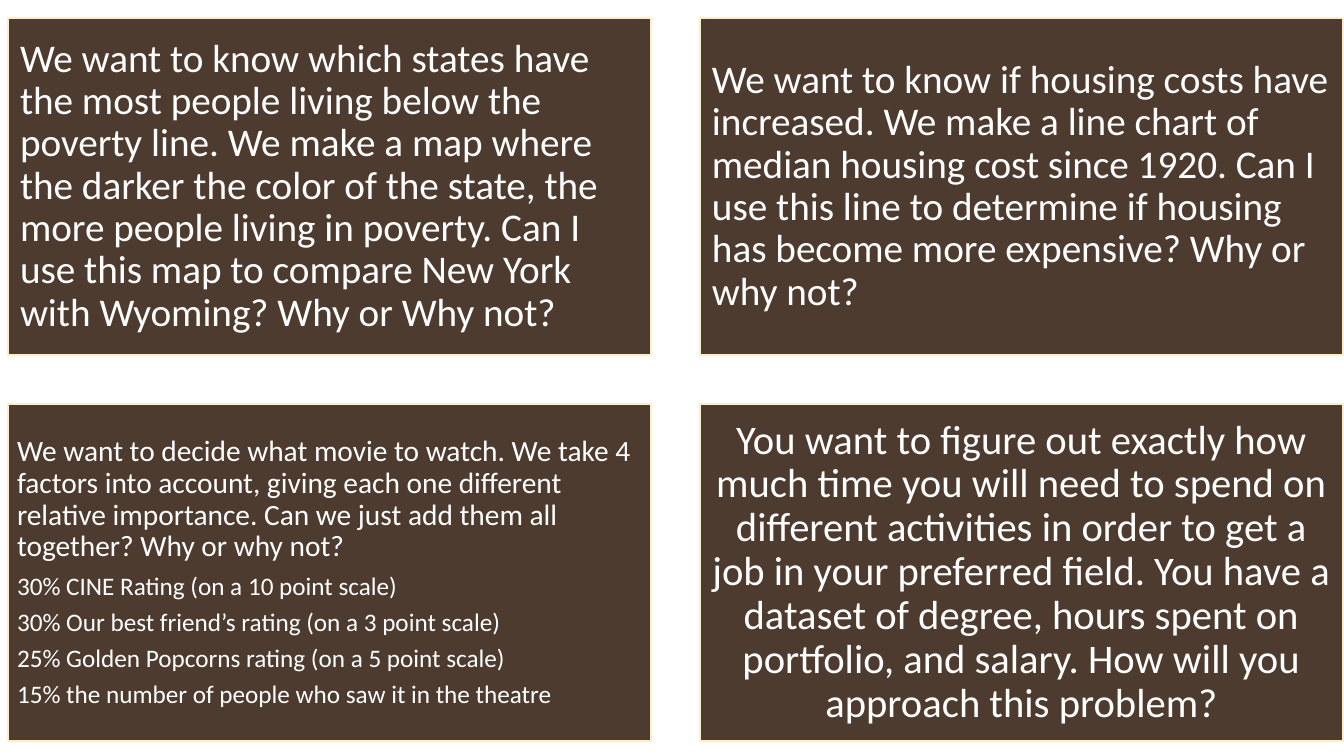
from pptx import Presentation
from pptx.dml.color import RGBColor
from pptx.enum.shapes import MSO_SHAPE
from pptx.enum.text import MSO_ANCHOR, PP_ALIGN
from pptx.util import Emu, Pt

COLORS = {"card": "4E3B30", "border": "FBEEC9", "text": "FFFFFF"}
FONT = "Calibri"
SLIDE_WIDTH, SLIDE_HEIGHT = 1344, 756
CARD_WIDTH, CARD_HEIGHT = 643, 337
GRID_LEFT, GRID_TOP = 8, 18
COLUMN_GAP, ROW_GAP = 49, 49

QUESTIONS = [
    {
        "lines": [(28, "We want to know which states have the most people living below the "
                       "poverty line. We make a map where the darker the color of the state, "
                       "the more people living in poverty. Can I use this map to compare "
                       "New York with Wyoming? Why or Why not?")],
        "inset": 12,
        "align": PP_ALIGN.LEFT,
    },
    {
        "lines": [(28, "We want to know if housing costs have increased. We make a line chart "
                       "of median housing cost since 1920. Can I use this line to determine "
                       "if housing has become more expensive? Why or why not?")],
        "inset": 12,
        "align": PP_ALIGN.LEFT,
    },
    {
        "lines": [
            (21, "We want to decide what movie to watch. We take 4 factors into account, "
                 "giving each one different relative importance. Can we just add them all "
                 "together? Why or why not?"),
            (18, "30% CINE Rating (on a 10 point scale)"),
            (18, "30% Our best friend’s rating (on a 3 point scale)"),
            (18, "25% Golden Popcorns rating (on a 5 point scale)"),
            (18, "15% the number of people who saw it in the theatre"),
        ],
        "inset": 9,
        "align": PP_ALIGN.LEFT,
    },
    {
        "lines": [(29, "You want to figure out exactly how much time you will need to spend on "
                       "different activities in order to get a job in your preferred field. "
                       "You have a dataset of degree, hours spent on portfolio, and salary. "
                       "How will you approach this problem?")],
        "inset": 12,
        "align": PP_ALIGN.CENTER,
    },
]


def px(length):
    """Turn whole pixels into EMU."""
    return Emu(round(length * 914400 / 100.8))


def color(name):
    """Look up a palette colour."""
    return RGBColor.from_string(COLORS[name])


def add_question_card(slide, box, question):
    """Draw one filled card with its question inside the given box."""
    card = slide.shapes.add_shape(MSO_SHAPE.RECTANGLE, *map(px, box))
    card.shadow.inherit = False
    card.fill.solid()
    card.fill.fore_color.rgb = color("card")
    card.line.color.rgb = color("border")
    card.line.width = Pt(1)

    body = card.text_frame
    body.word_wrap = True
    body.vertical_anchor = MSO_ANCHOR.MIDDLE
    body.margin_left = body.margin_right = px(question["inset"])
    body.margin_top = body.margin_bottom = px(question["inset"])
    for index, (size, wording) in enumerate(question["lines"]):
        line = body.add_paragraph() if index else body.paragraphs[0]
        line.text = wording
        line.alignment = question["align"]
        line.line_spacing = 0.9
        line.space_after = Pt(size * 0.35)
        line.font.name = FONT
        line.font.size = Pt(size)
        line.font.color.rgb = color("text")


def add_question_grid(slide, left, top):
    """Lay the questions out in two columns from the given corner."""
    for index, question in enumerate(QUESTIONS):
        row, column = divmod(index, 2)
        box = (left + column * (CARD_WIDTH + COLUMN_GAP),
               top + row * (CARD_HEIGHT + ROW_GAP),
               CARD_WIDTH, CARD_HEIGHT)
        add_question_card(slide, box, question)


def main():
    """Build and save the slide."""
    deck = Presentation()
    deck.slide_width, deck.slide_height = px(SLIDE_WIDTH), px(SLIDE_HEIGHT)
    slide = deck.slides.add_slide(deck.slide_layouts.get_by_name("Blank"))
    add_question_grid(slide, GRID_LEFT, GRID_TOP)
    deck.save("out.pptx")


if __name__ == "__main__":
    main()
